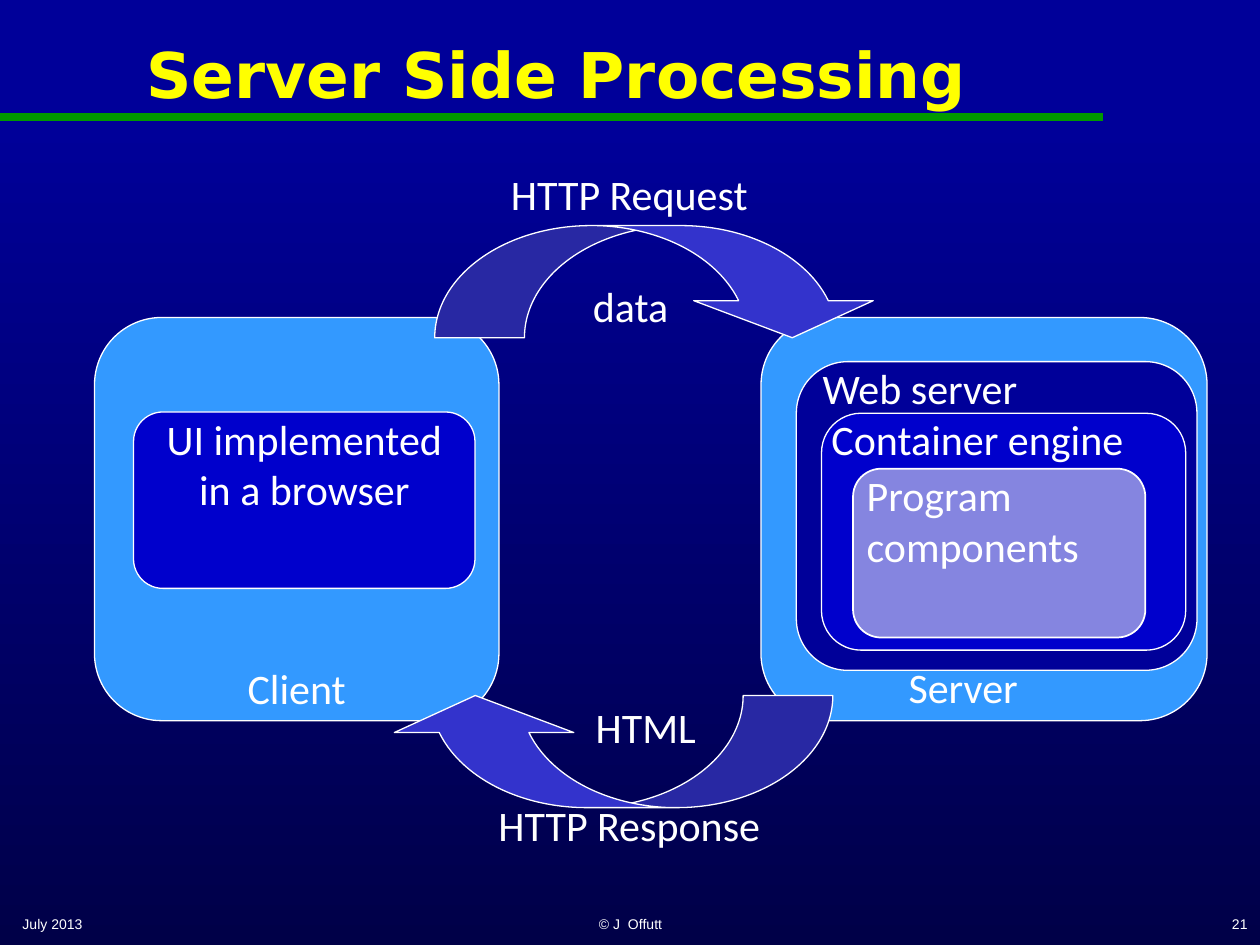
from dataclasses import dataclass

from lxml import etree
from pptx import Presentation
from pptx.dml.color import RGBColor
from pptx.enum.shapes import MSO_CONNECTOR, MSO_SHAPE
from pptx.enum.text import MSO_ANCHOR, MSO_AUTO_SIZE, PP_ALIGN
from pptx.oxml.ns import qn
from pptx.util import Inches, Pt

LEFT, CENTER, RIGHT = PP_ALIGN.LEFT, PP_ALIGN.CENTER, PP_ALIGN.RIGHT
TOP, MIDDLE = MSO_ANCHOR.TOP, MSO_ANCHOR.MIDDLE
ROUNDED = MSO_SHAPE.ROUNDED_RECTANGLE
CURVED_ARROW = MSO_SHAPE.CURVED_DOWN_ARROW
STRAIGHT = MSO_CONNECTOR.STRAIGHT
FIT_SHAPE, NO_FIT = MSO_AUTO_SIZE.SHAPE_TO_FIT_TEXT, MSO_AUTO_SIZE.NONE

WHITE = RGBColor(0xFF, 0xFF, 0xFF)
YELLOW = RGBColor(0xFF, 0xFF, 0x00)
GREEN = RGBColor(0x00, 0x99, 0x00)
SKY = RGBColor(0x33, 0x99, 0xFF)
NAVY = RGBColor(0x00, 0x00, 0x99)
MIDNIGHT = RGBColor(0x00, 0x00, 0x48)
BLUE = RGBColor(0x00, 0x00, 0xCC)
INDIGO = RGBColor(0x33, 0x33, 0xCC)
LAVENDER = RGBColor(0x85, 0x85, 0xE0)

COLUMNS, ROWS = 100, 75
WIDTH, HEIGHT = Inches(10), Inches(7.5)
COLUMN, ROW = WIDTH / COLUMNS, HEIGHT / ROWS
LINE_ROWS = 5


@dataclass(frozen=True)
class Area:
    column: float
    row: float
    columns: float
    rows: float

    def emu(self) -> tuple[int, int, int, int]:
        return (round(self.column * COLUMN), round(self.row * ROW),
                round(self.columns * COLUMN), round(self.rows * ROW))


@dataclass(frozen=True)
class Panel:
    area: Area
    fill: RGBColor
    line_width: float = 0.75


@dataclass(frozen=True)
class Arrow:
    area: Area
    rotation: int


@dataclass(frozen=True)
class Label:
    text: str
    area: Area
    align: PP_ALIGN = CENTER
    font: str = "Calibri"
    size: int = 24
    anchor: MSO_ANCHOR = TOP


def style_text(shape, label: Label, color: RGBColor = WHITE, bold: bool = False) -> None:
    frame = shape.text_frame
    frame.text = label.text
    frame.word_wrap = True
    frame.vertical_anchor = label.anchor
    para = frame.paragraphs[0]
    para.alignment = label.align
    for span in para.runs:
        span.font.name = label.font
        span.font.size = Pt(label.size)
        span.font.bold = bold
        span.font.color.rgb = color


def add_filled(page, kind: MSO_SHAPE, area: Area, fill: RGBColor, line_width: float):
    shape = page.shapes.add_shape(kind, *area.emu())
    shape.shadow.inherit = False
    shape.fill.solid()
    shape.fill.fore_color.rgb = fill
    shape.line.color.rgb = WHITE
    shape.line.width = Pt(line_width)
    return shape


def add_panel(page, panel: Panel) -> None:
    add_filled(page, ROUNDED, panel.area, panel.fill, panel.line_width)


def add_arrow(page, arrow: Arrow) -> None:
    shape = add_filled(page, CURVED_ARROW, arrow.area, INDIGO, 0.75)
    shape.rotation = arrow.rotation
    for index, value in enumerate((0.8, 1.6, 0.33)):
        shape.adjustments[index] = value


def add_label(page, label: Label) -> None:
    box = page.shapes.add_textbox(*label.area.emu())
    style_text(box, label)
    box.text_frame.auto_size = FIT_SHAPE if label.anchor == TOP else NO_FIT


def add_title(page, label: Label) -> None:
    title = page.shapes.title
    title.left, title.top, title.width, title.height = label.area.emu()
    style_text(title, label, YELLOW, True)
    title.text_frame.auto_size = NO_FIT


def add_title_rule(page) -> None:
    height = round(9.3 * ROW)
    rule = page.shapes.add_connector(STRAIGHT, 0, height, round(87.5 * COLUMN), height)
    rule.line.color.rgb = GREEN
    rule.line.width = Pt(4.5)
    etree.SubElement(rule._element.spPr, qn("a:effectLst"))


def paint_background(page) -> None:
    fill = page.background.fill
    fill.gradient()
    fill.gradient_angle = 270
    for stop, position, color in zip(fill.gradient_stops, (0.13, 1), (NAVY, MIDNIGHT)):
        stop.position = position
        stop.color.rgb = color


TITLE = Label("Server Side Processing", Area(0.8, 0.8, 86.7, 10),
              font="DejaVu Sans", size=36, anchor=MIDDLE)

FOOTERS = [
    Label(text, Area(column, 71.7, columns, 3.3), align, "Arial", 8, MIDDLE)
    for text, column, columns, align in (
        ("July 2013", 0.8, 20.8, LEFT),
        ("© J  Offutt", 34.2, 31.7, CENTER),
        ("21", 79.2, 20.8, RIGHT),
    )
]

DIAGRAM = [
    Panel(Area(7.5, 25.2, 32.1, 32), SKY),
    Panel(Area(60.4, 25.2, 35.4, 32), SKY),
    Arrow(Area(34.5, 17.9, 35.5, 8.9), 0),
    Arrow(Area(30.6, 55.2, 35.5, 8.9), 180),
    Label("HTTP Response", Area(37.7, 63, 24.5, LINE_ROWS)),
    Label("HTTP Request", Area(37.7, 12.9, 24.5, LINE_ROWS)),
    Label("Client", Area(17.2, 52.1, 12.7, LINE_ROWS)),
    Label("Server", Area(70.1, 52, 12.7, LINE_ROWS)),
    Label("data", Area(45.7, 21.8, 8.7, LINE_ROWS)),
    Label("HTML", Area(44.2, 55.2, 14.1, LINE_ROWS)),
    Panel(Area(10.6, 32.7, 27.1, 14), BLUE),
    Label("UI implemented in a browser", Area(11.4, 32.3, 25.5, 9.1)),
    Panel(Area(63.2, 28.7, 31.8, 24.5), NAVY),
    Label("Web server", Area(64.3, 28.3, 20.2, LINE_ROWS), LEFT),
    Panel(Area(65.2, 32.8, 28.9, 18.8), BLUE),
    Label("Container engine", Area(65, 32.3, 29.2, LINE_ROWS), LEFT),
    Panel(Area(67.7, 37.2, 23.2, 13.4), LAVENDER, 1),
    Label("Program components", Area(67.8, 36.8, 25.6, 9.1), LEFT),
]

DRAW = {Panel: add_panel, Arrow: add_arrow, Label: add_label}


def main() -> None:
    deck = Presentation()
    deck.slide_width, deck.slide_height = WIDTH, HEIGHT
    page = deck.slides.add_slide(deck.slide_layouts[5])
    paint_background(page)
    add_title_rule(page)
    add_title(page, TITLE)
    for item in FOOTERS + DIAGRAM:
        DRAW[type(item)](page, item)
    deck.save("out.pptx")


if __name__ == "__main__":
    main()
